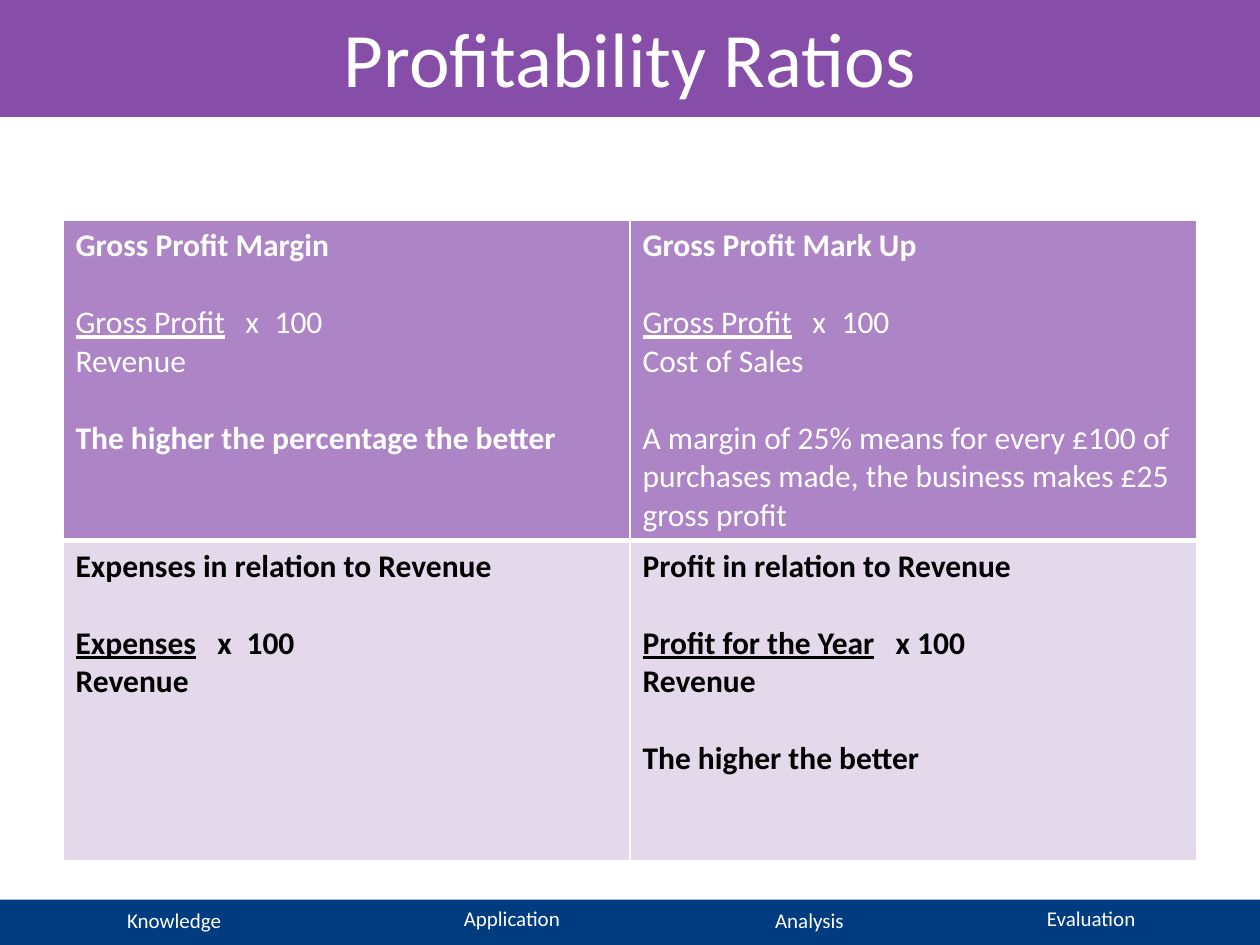
from lxml import etree
from pptx import Presentation
from pptx import util as u
from pptx.dml.color import RGBColor
from pptx.enum import shapes, text
from pptx.oxml.ns import qn

Pt = u.Pt
COLORS = {"band": "874EA9", "footer": "003C7F", "head": "AD84C6",
          "body": "E3D9EA", "white": "FFFFFF", "black": "000000"}
FONT = "Calibri"
LINE_GAP = 22  # one line of 18 pt text

FOOTER = [("Knowledge", 3, 515), ("Application", 196, 514),
          ("Analysis", 366, 515), ("Evaluation", 527, 514)]

# Paragraph: (runs, gap before, tab stops); run: (text, bold, underline)
RATIOS = [
    [
        [([("Gross Profit Margin", True, False)], 0, ()),
         ([("Gross Profit\t", False, True), ("x\t100", False, False)],
          LINE_GAP, (97, 113.7)),
         ([("Revenue", False, False)], 0, ()),
         ([("The higher the percentage the better", True, False)], LINE_GAP, ())],
        [([("Gross Profit Mark Up", True, False)], 0, ()),
         ([("Gross Profit\t", False, True), ("x\t100", False, False)],
          LINE_GAP, (97, 113.7)),
         ([("Cost of Sales", False, False)], 0, ()),
         ([("A margin of 25% means for every £100 of purchases made, "
            "the business makes £25 gross profit", False, False)], LINE_GAP, ())],
    ],
    [
        [([("Expenses in relation to Revenue", True, False)], 0, ()),
         ([("Expenses", True, True), ("\tx\t100", True, False)],
          LINE_GAP, (81, 97.7)),
         ([("Revenue", True, False)], 0, ())],
        [([("Profit in relation to Revenue", True, False)], 0, ()),
         ([("Profit for the Year\t", True, True), ("x 100", True, False)],
          LINE_GAP, (144.6,)),
         ([("Revenue", True, False)], 0, ()),
         ([("The higher the better", True, False)], LINE_GAP, ())],
    ],
]


def rgb(name):
    return RGBColor.from_string(COLORS[name])


def format_font(font, color, **values):
    font.name = FONT
    font.color.rgb = rgb(color)
    for key, value in values.items():
        setattr(font, key, value)


def add_band(s, top, height, color):
    sp = s.shapes.add_shape(shapes.MSO_SHAPE.RECTANGLE,
                            0, Pt(top), Pt(720), Pt(height))
    sp.shadow.inherit = False
    sp.fill.solid()
    sp.fill.fore_color.rgb = rgb(color)
    sp.line.fill.background()
    return sp


def add_label(s, label, left, top):
    tf = s.shapes.add_textbox(Pt(left), Pt(top), Pt(193), Pt(22)).text_frame
    tf.word_wrap = True
    p = tf.paragraphs[0]
    p.alignment = text.PP_ALIGN.CENTER
    r = p.add_run()
    r.text = label
    format_font(r.font, "white", size=Pt(12))


def set_title(s, title):
    sp = s.shapes.title
    sp.left, sp.top, sp.width, sp.height = Pt(36), 0, Pt(648), Pt(90)
    s.shapes._spTree.append(sp._element)  # in front of the band
    tf = sp.text_frame
    tf.vertical_anchor = text.MSO_ANCHOR.TOP
    tf.margin_top = Pt(6)
    p = tf.paragraphs[0]
    p.alignment = text.PP_ALIGN.CENTER
    r = p.add_run()
    r.text = title
    format_font(r.font, "white", size=Pt(44))


def add_tabs(p, stops):
    tabs = etree.SubElement(p._p.get_or_add_pPr(), qn("a:tabLst"))
    for stop in stops:
        etree.SubElement(tabs, qn("a:tab"), pos=str(Pt(stop)), algn="l")


def set_borders(cell, widths):
    tc_pr = cell._tc.get_or_add_tcPr()
    for i, (side, width) in enumerate(zip("LRTB", widths)):
        ln = etree.Element(qn(f"a:ln{side}"), w=str(Pt(width)))
        fill = etree.SubElement(ln, qn("a:solidFill"))
        etree.SubElement(fill, qn("a:srgbClr"), val=COLORS["white"])
        tc_pr.insert(i, ln)


def fill_cell(cell, paragraphs, fill, color, borders):
    cell.fill.solid()
    cell.fill.fore_color.rgb = rgb(fill)
    set_borders(cell, borders)
    tf = cell.text_frame
    for i, (runs, gap, stops) in enumerate(paragraphs):
        p = tf.add_paragraph() if i else tf.paragraphs[0]
        if gap:
            p.space_before = Pt(gap)
        if stops:
            add_tabs(p, stops)
        for content, bold, underline in runs:
            r = p.add_run()
            r.text = content
            format_font(r.font, color, size=Pt(18), bold=bold, underline=underline)


def add_ratio_table(s):
    table = s.shapes.add_table(2, 2, Pt(36), Pt(126), Pt(648), Pt(365.6)).table
    styles = [("head", "white", (1, 1, 1, 3)), ("body", "black", (1, 1, 3, 1))]
    for row, (cells, style) in enumerate(zip(RATIOS, styles)):
        for col, paragraphs in enumerate(cells):
            fill_cell(table.cell(row, col), paragraphs, *style)


def main():
    prs = Presentation()
    prs.slide_width, prs.slide_height = Pt(720), Pt(540)
    s = prs.slides.add_slide(prs.slide_layouts[5])

    # Header
    band = add_band(s, 0, 66, "band")
    band.line.color.rgb = rgb("band")
    band.line.width = Pt(2)
    set_title(s, "Profitability Ratios")

    # Ratios
    add_ratio_table(s)

    # Footer
    add_band(s, 514, 26, "footer")
    for label in FOOTER:
        add_label(s, *label)

    prs.save("out.pptx")


if __name__ == "__main__":
    main()
